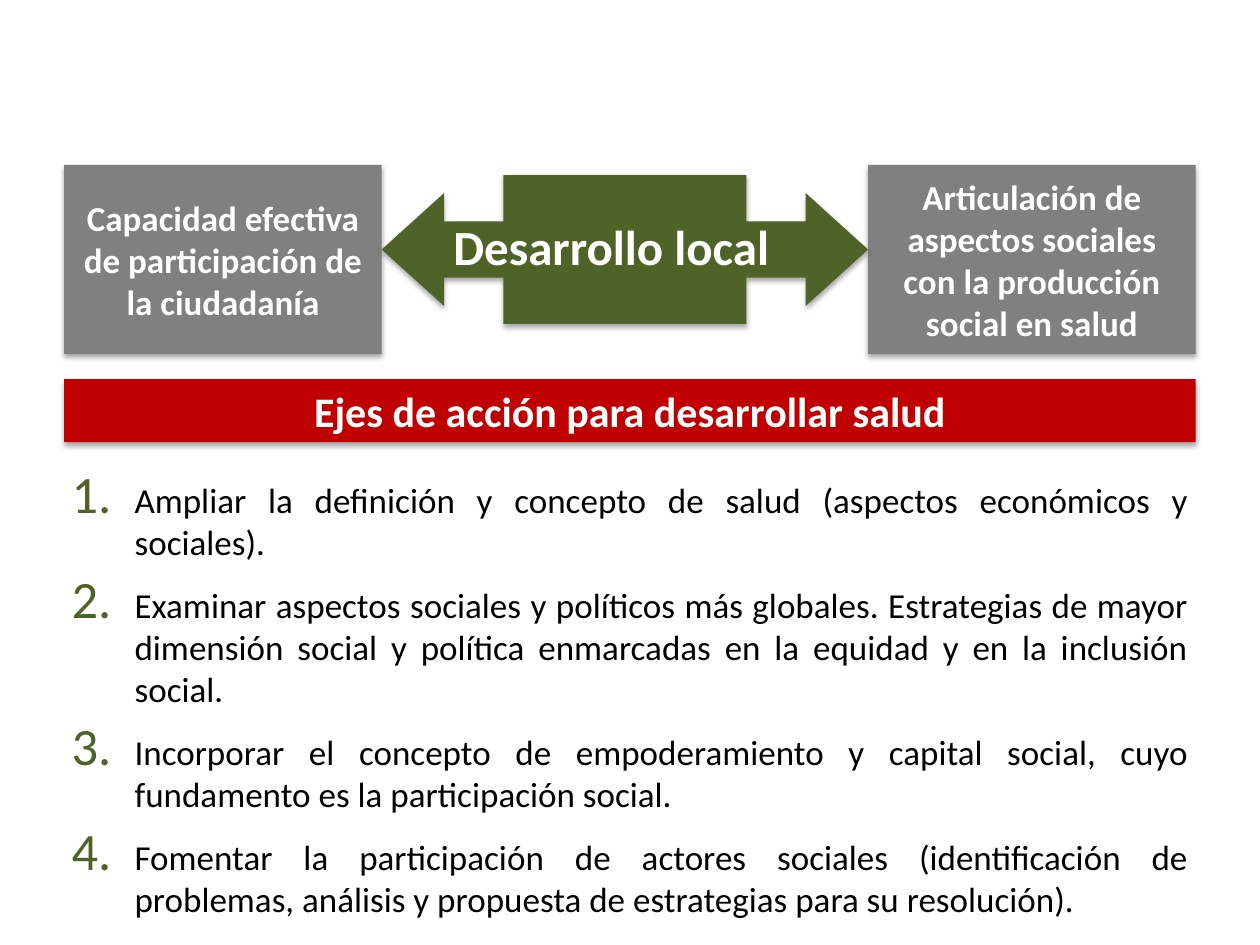
from lxml import etree
from pptx import Presentation, util as u
from pptx.dml.color import RGBColor
from pptx.enum import shapes, text
from pptx.oxml.ns import qn

GRAY, GREEN, RED = "808080", "4F6228", "C00000"
WHITE, BLACK = "FFFFFF", "000000"
CENTER, JUSTIFY = text.PP_ALIGN.CENTER, text.PP_ALIGN.JUSTIFY


def color(value):
    return RGBColor.from_string(value)


def add_child(parent, tag, **attributes):
    return etree.SubElement(parent, qn(tag), {k: str(v) for k, v in attributes.items()})


class Page:
    font = "Calibri"
    columns, rows = 100, 75

    def __init__(self, deck):
        self.slide = deck.slides.add_slide(deck.slide_layouts[6])
        self.column = deck.slide_width / self.columns
        self.row = deck.slide_height / self.rows

    def place(self, left, top, width, height):
        return [int(n) for n in (left * self.column, top * self.row,
                                 width * self.column, height * self.row)]

    def shape(self, kind, area, fill):
        shape = self.slide.shapes.add_shape(kind, *self.place(*area))
        shape.fill.solid()
        shape.fill.fore_color.rgb = color(fill)
        shape.line.fill.background()
        shape.shadow.inherit = False
        effects = shape._element.spPr.find(qn("a:effectLst"))
        shadow = add_child(effects, "a:outerShdw", blurRad=u.Pt(3.1), dist=u.Pt(1.8),
                           dir=5400000, rotWithShape=0)
        add_child(add_child(shadow, "a:srgbClr", val=BLACK), "a:alpha", val=35000)
        return shape

    def style(self, para, size, ink, align, bold=True):
        para.alignment = align
        para.font.name = self.font
        para.font.size = u.Pt(size)
        para.font.bold = bold
        para.font.color.rgb = color(ink)

    def panel(self, area, fill, words, size):
        frame = self.shape(shapes.MSO_SHAPE.RECTANGLE, area, fill).text_frame
        frame.text = words
        frame.word_wrap = True
        frame.vertical_anchor = text.MSO_ANCHOR.MIDDLE
        self.style(frame.paragraphs[0], size, WHITE, CENTER)

    def double_arrow(self, area, fill, adjustments):
        arrow = self.shape(shapes.MSO_SHAPE.UP_DOWN_ARROW_CALLOUT, area, fill)
        arrow.rotation = 270
        for index, value in enumerate(adjustments):
            arrow.adjustments[index] = value

    def text_box(self, area):
        frame = self.slide.shapes.add_textbox(*self.place(*area)).text_frame
        frame.word_wrap = True
        return frame

    def label(self, area, words, size):
        frame = self.text_box(area)
        frame.text = words
        self.style(frame.paragraphs[0], size, WHITE, JUSTIFY)

    def numbered_list(self, area, items, size, gap):
        frame = self.text_box(area)
        frame.text = "\n".join(items)
        for index, para in enumerate(frame.paragraphs):
            para.space_before = u.Pt(gap if index else 0)
            properties = para._p.get_or_add_pPr()
            properties.set("marL", str(u.Inches(0.5)))
            properties.set("indent", str(-u.Inches(0.5)))
            add_child(add_child(properties, "a:buClr"), "a:srgbClr", val=GREEN)
            add_child(properties, "a:buSzPct", val=150000)
            add_child(properties, "a:buFont", typeface=self.font)
            add_child(properties, "a:buAutoNum", type="arabicPeriod")
            self.style(para, size, BLACK, JUSTIFY, bold=False)


def main():
    deck = Presentation()
    deck.slide_width, deck.slide_height = u.Inches(10), u.Inches(7.5)
    page = Page(deck)
    page.panel((68.9, 13.1, 26, 15), GRAY,
               "Articulación de aspectos sociales con la producción social en salud", 20)
    page.panel((5.1, 13.1, 25.2, 15), GRAY,
               "Capacidad efectiva de participación de la ciudadanía", 20)
    page.double_arrow((43.7, 0.5, 11.8, 38.6), GREEN, (0.38, 0.38, 0.42, 0.5))
    page.label((35, 16.7, 37, 7.4), "Desarrollo local", 28)
    page.panel((5.1, 30.1, 89.8, 5), RED, "Ejes de acción para desarrollar salud", 24)
    page.numbered_list((4.7, 37.5, 90.6, 36.4), (
        "Ampliar la definición y concepto de salud (aspectos económicos y sociales).",
        "Examinar aspectos sociales y políticos más globales. Estrategias de mayor dimensión "
        "social y política enmarcadas en la equidad y en la inclusión social.",
        "Incorporar el concepto de empoderamiento y capital social, cuyo fundamento es la "
        "participación social.",
        "Fomentar la participación de actores sociales (identificación de problemas, análisis "
        "y propuesta de estrategias para su resolución).",
    ), 20, 12)
    deck.save("out.pptx")


if __name__ == "__main__":
    main()
